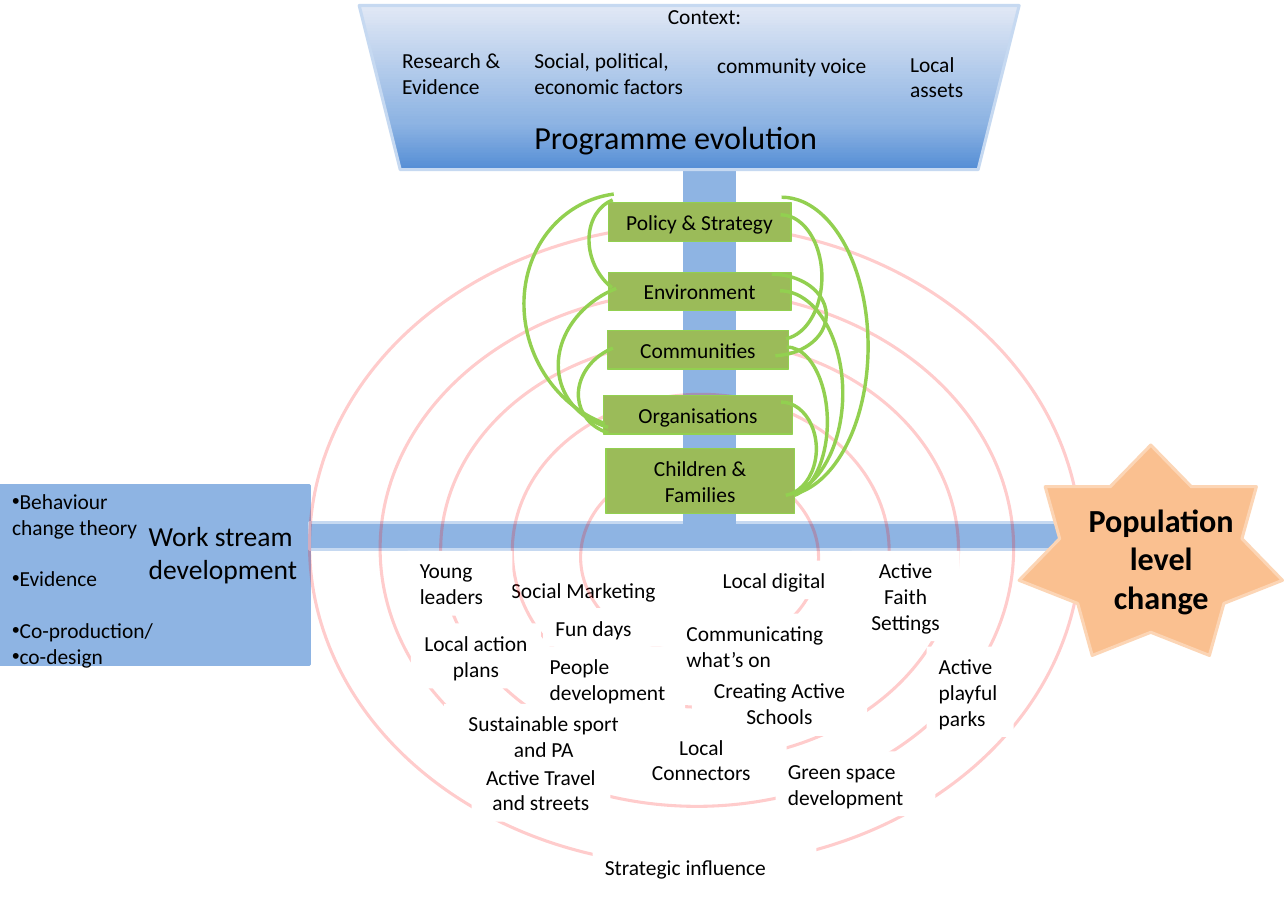
"""Build the programme evolution slide."""
from dataclasses import dataclass
from typing import NamedTuple, Optional

from pptx import Presentation
from pptx.dml.color import RGBColor
from pptx.enum.shapes import MSO_SHAPE as Preset
from pptx.enum.text import MSO_ANCHOR as Anchor, MSO_AUTO_SIZE as AutoSize, PP_ALIGN as Align
from pptx.oxml import parse_xml
from pptx.oxml.ns import nsdecls, qn
from pptx.oxml.xmlchemy import OxmlElement
from pptx.util import Inches, Pt


@dataclass(frozen=True)
class Theme:
    """Colours, type sizes and line widths of the slide."""
    font: str = "Calibri"
    ink: str = "000000"
    paper: str = "FFFFFF"
    blue: str = "8EB4E3"
    deep_blue: str = "558ED5"
    pale_blue: str = "E1E8F5"
    blue_edge: str = "C6D9F1"
    green: str = "9BBB59"
    lime: str = "92D050"
    orange: str = "FAC090"
    orange_edge: str = "FCD5B5"
    ring: str = "FF0000"
    ring_alpha: int = 20000
    small: float = 14
    medium: float = 18
    large: float = 21
    thin: float = 0.75
    edge: float = 2
    curve: float = 2.25


THEME = Theme()


class Place(NamedTuple):
    """Left, top, width and height in inches."""
    left: float
    top: float
    width: float
    height: float


class Label(NamedTuple):
    """A piece of text with its place and format."""
    text: str
    place: Place
    align: Align = Align.LEFT
    anchor: Anchor = Anchor.TOP
    size: float = THEME.small
    bold: bool = False


class Arc(NamedTuple):
    """A curve between two stages."""
    place: Place
    start: float = 162
    end: float = 50.57
    rotation: float = 0


BEHAVIOUR_BLOCK = Place(0, 4.41, 2.81, 1.62)
WORK_BAR = Place(2.81, 4.74, 7.24, 0.25)
PROGRAMME_POLE = Place(6.21, 1.48, 0.46, 3.38)
CONTEXT_FUNNEL = Place(3.26, 0.05, 5.99, 1.49)
CHANGE_STAR = Place(9.25, 4.04, 2.39, 1.91)

RINGS = [
    Place(2.81, 2.04, 7, 5.82),
    Place(5.27, 4.19, 2.16, 1.74),
    Place(4.65, 3.58, 3.42, 2.84),
    Place(3.45, 2.64, 5.75, 4.68),
    Place(4, 3.08, 4.7, 3.82),
]
STAGES = [
    Label(text, Place(*place), Align.CENTER, Anchor.MIDDLE)
    for text, place in [
        ("Children & Families", (5.5, 4.07, 1.71, 0.59)),
        ("Policy & Strategy", (5.52, 1.84, 1.66, 0.35)),
        ("Environment", (5.52, 2.47, 1.66, 0.35)),
        ("Communities", (5.51, 3, 1.65, 0.35)),
        ("Organisations", (5.48, 3.59, 1.71, 0.35)),
    ]
]
MARKETING = Label("Social Marketing", Place(4.53, 5.03, 2.14, 0.5), anchor=Anchor.BOTTOM)
ACTIVITIES = [
    Label("Green space development", Place(7.04, 6.82, 1.45, 0.59)),
    Label("Active playful parks", Place(8.41, 5.87, 0.79, 0.82)),
    Label("Local action plans", Place(3.73, 5.66, 1.18, 0.59), Align.CENTER),
    Label("Young leaders", Place(3.7, 5, 0.95, 0.59)),
    Label("Sustainable sport and PA", Place(4.03, 6.39, 1.81, 0.59), Align.CENTER),
    Label("Fun days", Place(4.93, 5.52, 1.38, 0.35)),
    Label("Local digital", Place(6.45, 5.09, 1.33, 0.35)),
    Label("Creating Active Schools", Place(6.28, 6.09, 1.59, 0.59), Align.CENTER),
    Label("Active Faith Settings", Place(7.73, 5, 0.98, 0.82), Align.CENTER),
    Label("Communicating what’s on", Place(6.12, 5.57, 1.75, 0.59)),
    Label("People development", Place(4.88, 5.87, 1.34, 0.59)),
    Label("Active Travel and streets", Place(4.28, 6.87, 1.26, 0.59), Align.CENTER, Anchor.MIDDLE),
    Label("Strategic influence", Place(5.38, 7.69, 2.03, 0.35)),
    Label("Local Connectors", Place(5.59, 6.6, 1.55, 0.59), Align.CENTER, Anchor.MIDDLE),
]
ARCS = [
    Arc(Place(6.31, 1.79, 1.57, 2.71)),
    Arc(Place(6.51, 2.64, 1.14, 1.86)),
    Arc(Place(6.77, 3.15, 0.74, 1.36)),
    Arc(Place(6.77, 3.65, 0.64, 0.85)),
    Arc(Place(5.18, 2.44, 1.32, 1.58), 136.95, 0, 248),
    Arc(Place(4.67, 1.84, 2.18, 1.98), 130.16, 7.17, 248),
    Arc(Place(5.31, 3.06, 0.81, 0.95), 136.95, 0, 248),
    Arc(Place(6.51, 2.49, 0.99, 0.74), end=51.02),
    Arc(Place(6.71, 1.95, 0.75, 1.13), end=51.02),
    Arc(Place(5.27, 1.87, 0.93, 0.75), 136.95, 0, 248),
]
CONTEXTS = [
    Label("Context:", Place(5.56, -0.03, 1.67, 0.35), Align.CENTER),
    Label("Research & Evidence", Place(3.54, 0.37, 1.2, 0.59)),
    Label("Social, political, economic factors", Place(4.74, 0.37, 1.75, 0.59)),
    Label("community voice", Place(6.4, 0.41, 1.72, 0.35)),
    Label("Local assets", Place(8.15, 0.4, 0.92, 0.59)),
]
TITLE = Label("Programme evolution", Place(4.74, 1.01, 4.51, 0.47), size=THEME.large)
WORK_STREAM = Label("Work stream development", Place(1.24, 4.65, 1.7, 0.72), size=THEME.medium)
INPUTS = Label("Behaviour change theory\nEvidence\nCo-production/\nco-design", Place(0, 4.37, 1.56, 1.76))
INPUT_GAPS = (0, 17, 17, 0)
CHANGE = Label("Population level change", Place(9.71, 4.48, 1.66, 1.18), Align.CENTER,
               size=THEME.large, bold=True)


def set_all(target, values: dict) -> None:
    """Set each named attribute of the target."""
    for name, value in values.items():
        setattr(target, name, value)


def write(box, label: Label, gaps: tuple = (0,)) -> None:
    """Write a label, one paragraph for each line, into a box."""
    frame = box.text_frame
    frame.text = label.text
    set_all(frame, {"word_wrap": True, "auto_size": AutoSize.NONE, "vertical_anchor": label.anchor,
                    "margin_left": Inches(0.11), "margin_right": Inches(0.11),
                    "margin_top": Inches(0.06), "margin_bottom": Inches(0.06)})
    for para, gap in zip(frame.paragraphs, gaps):
        set_all(para, {"alignment": label.align, "space_before": Pt(gap)})
        set_all(para.font, {"name": THEME.font, "size": Pt(label.size), "bold": label.bold})
        para.font.color.rgb = RGBColor.from_string(THEME.ink)


def draw(page, preset: Preset, place: Place, fill: Optional[str] = None,
         line: Optional[str] = None, width: float = THEME.edge):
    """Draw a preset shape, leaving out a missing fill or line."""
    shape = page.shapes.add_shape(preset, *map(Inches, place))
    shape.shadow.inherit = False
    for paint, colour in ((shape.fill, fill), (shape.line.fill, line)):
        if colour:
            paint.solid()
            paint.fore_color.rgb = RGBColor.from_string(colour)
        else:
            paint.background()
    if line:
        shape.line.width = Pt(width)
    return shape


def draw_ring(page, place: Place) -> None:
    """Draw a see-through ring."""
    ring = draw(page, Preset.OVAL, place, line=THEME.ring)
    alpha = OxmlElement("a:alpha")
    alpha.set("val", str(THEME.ring_alpha))
    ring.line._get_or_add_ln().find(".//" + qn("a:srgbClr")).append(alpha)


def draw_arc(page, arc: Arc) -> None:
    """Draw a curve between two stages."""
    shape = draw(page, Preset.ARC, arc.place, line=THEME.lime, width=THEME.curve)
    shape.adjustments[0], shape.adjustments[1] = arc.start, arc.end
    shape.rotation = arc.rotation


def draw_funnel(page):
    """Draw the upside-down trapezoid with its gradient."""
    funnel = draw(page, Preset.TRAPEZOID, CONTEXT_FUNNEL, THEME.blue, THEME.blue_edge)
    funnel.rotation = 180
    stops = "".join(f'<a:gs pos="{spot}"><a:srgbClr val="{colour}"/></a:gs>' for spot, colour in
                    ((0, THEME.deep_blue), (29000, THEME.blue), (100000, THEME.pale_blue)))
    gradient = parse_xml(f'<a:gradFill {nsdecls("a")} rotWithShape="1"><a:gsLst>{stops}</a:gsLst>'
                         '<a:lin ang="5400000" scaled="0"/></a:gradFill>')
    properties = funnel.element.spPr
    properties.replace(properties.find(qn("a:solidFill")), gradient)
    return funnel


def add_text(page, label: Label) -> None:
    """Add a text box holding a label."""
    write(page.shapes.add_textbox(*map(Inches, label.place)), label)


def fill_placeholder(holder, label: Label, below, gaps: tuple = (0,)) -> None:
    """Place and fill a placeholder just above another shape."""
    set_all(holder, dict(zip(Place._fields, map(Inches, label.place))))
    holder.text_frame.text = label.text
    for para in holder.text_frame.paragraphs:
        properties = para._p.get_or_add_pPr()
        set_all(properties, {"marL": 0} if hasattr(properties, "marL") else {})
        properties.set("marL", "0")
        properties.set("indent", "0")
        properties.append(OxmlElement("a:buNone"))
    frame_text = [para.text for para in holder.text_frame.paragraphs]
    write(holder, label._replace(text="\n".join(frame_text)), gaps)
    for para in holder.text_frame.paragraphs:
        properties = para._p.get_or_add_pPr()
        properties.set("marL", "0")
        properties.set("indent", "0")
    below.element.addnext(holder.element)


def main() -> None:
    """Build and save the slide."""
    deck = Presentation()
    set_all(deck, {"slide_width": Inches(11.69), "slide_height": Inches(8.27)})
    page = deck.slides.add_slide(deck.slide_layouts[1])
    block = draw(page, Preset.RECTANGLE, BEHAVIOUR_BLOCK, THEME.blue, THEME.blue)
    draw(page, Preset.RECTANGLE, WORK_BAR, THEME.blue, THEME.blue_edge)
    write(draw(page, Preset.RECTANGLE, MARKETING.place, THEME.paper), MARKETING)
    draw(page, Preset.RECTANGLE, PROGRAMME_POLE, THEME.blue, THEME.blue)
    for place in RINGS:
        draw_ring(page, place)
    for stage in STAGES:
        write(draw(page, Preset.RECTANGLE, stage.place, THEME.green, THEME.lime, THEME.thin), stage)
    for activity in ACTIVITIES:
        write(draw(page, Preset.RECTANGLE, activity.place, THEME.paper), activity)
    for arc in ARCS:
        draw_arc(page, arc)
    funnel = draw_funnel(page)
    for label in (*CONTEXTS, WORK_STREAM):
        add_text(page, label)
    draw(page, Preset.STAR_7_POINT, CHANGE_STAR, THEME.orange, THEME.orange_edge)
    add_text(page, CHANGE)
    fill_placeholder(page.shapes.title, TITLE, funnel)
    fill_placeholder(page.placeholders[1], INPUTS, block, INPUT_GAPS)
    deck.save("out.pptx")


if __name__ == "__main__":
    main()
